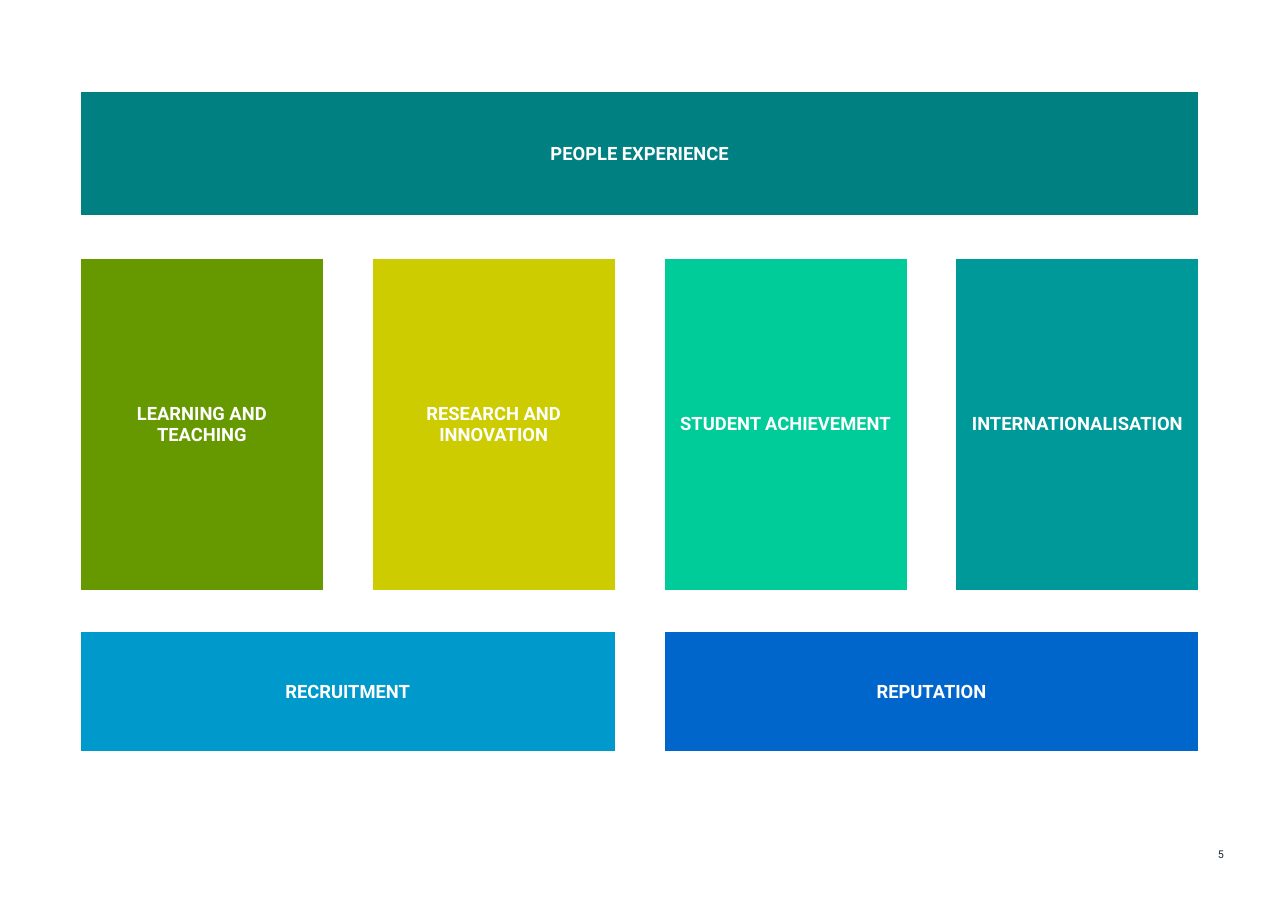
from lxml.etree import SubElement
from pptx import Presentation
from pptx.dml.color import RGBColor
from pptx.enum.text import MSO_ANCHOR as Anchor, PP_ALIGN as Align
from pptx.oxml.ns import qn
from pptx.util import Cm, Pt

FONT = "Roboto"
WHITE = RGBColor(0xFF, 0xFF, 0xFF)
INK = RGBColor(0x17, 0x29, 0x34)
TEAL = RGBColor(0x00, 0x80, 0x80)
GREEN = RGBColor(0x66, 0x99, 0x00)
YELLOW = RGBColor(0xCC, 0xCC, 0x00)
MINT = RGBColor(0x00, 0xCC, 0x99)
TURQUOISE = RGBColor(0x00, 0x99, 0x99)
SKY = RGBColor(0x00, 0x99, 0xCC)
BLUE = RGBColor(0x00, 0x66, 0xCC)

PILLAR_WIDTH, GAP_WIDTH = 5.61, 1.12
COLUMN_WIDTHS = [PILLAR_WIDTH, GAP_WIDTH] * 3 + [PILLAR_WIDTH]
ROW_HEIGHTS = [2.9, 0.94, 7.67, 0.94, 2.77]
THEMES = [
    (0, 0, 7, "PEOPLE EXPERIENCE", TEAL),
    (2, 0, 1, "LEARNING AND TEACHING", GREEN),
    (2, 2, 1, "RESEARCH AND INNOVATION", YELLOW),
    (2, 4, 1, "STUDENT ACHIEVEMENT", MINT),
    (2, 6, 1, "INTERNATIONALISATION", TURQUOISE),
    (4, 0, 3, "RECRUITMENT", SKY),
    (4, 4, 3, "REPUTATION", BLUE),
]


def write_text(frame, text, size, color, align, bold=False, spacing=0):
    """Write one formatted paragraph into a text frame."""
    paragraph = frame.paragraphs[0]
    paragraph.alignment = align
    run = paragraph.add_run()
    run.text = text
    run.font.name = FONT
    run.font.size = Pt(size)
    run.font.bold = bold
    run.font.color.rgb = color
    if spacing:
        run._r.get_or_add_rPr().set("spc", str(int(spacing * 100)))


def set_borders(cell, bottom_width):
    """Give a cell white borders."""
    properties = cell._tc.get_or_add_tcPr()
    widths = {"a:lnL": 1, "a:lnR": 1, "a:lnT": 1, "a:lnB": bottom_width}
    for tag, width in widths.items():
        line = SubElement(properties, qn(tag), w=str(Pt(width)))
        fill = SubElement(line, qn("a:solidFill"))
        SubElement(fill, qn("a:srgbClr"), val=str(WHITE))


def fill_cell(cell, color):
    """Fill a cell with a plain colour."""
    cell.fill.solid()
    cell.fill.fore_color.rgb = color


def add_theme_table(slide, left, top):
    """Place the table of strategic themes with its top left corner as given."""
    frame = slide.shapes.add_table(
        len(ROW_HEIGHTS), len(COLUMN_WIDTHS), Cm(left), Cm(top),
        Cm(sum(COLUMN_WIDTHS)), Cm(sum(ROW_HEIGHTS)))
    table = frame.table
    table.first_row = table.horz_banding = False
    for column, width in zip(table.columns, COLUMN_WIDTHS):
        column.width = Cm(width)
    for index, (row, height) in enumerate(zip(table.rows, ROW_HEIGHTS)):
        row.height = Cm(height)
        for cell in row.cells:
            cell.margin_top = cell.margin_bottom = 0
            set_borders(cell, bottom_width=3 if index == 0 else 1)
            fill_cell(cell, WHITE)
    for row, column, span, text, color in THEMES:
        cell = table.cell(row, column)
        if span > 1:
            cell.merge(table.cell(row, column + span - 1))
        fill_cell(cell, color)
        cell.vertical_anchor = Anchor.MIDDLE
        write_text(cell.text_frame, text, 12, WHITE, Align.CENTER, bold=True)


def add_page_number(slide, left, top, width, height):
    """Place the page number in the given box."""
    box = slide.shapes.add_textbox(Cm(left), Cm(top), Cm(width), Cm(height))
    frame = box.text_frame
    frame.word_wrap = True
    frame.vertical_anchor = Anchor.MIDDLE
    frame.margin_left = frame.margin_right = 0
    frame.margin_top = frame.margin_bottom = 0
    write_text(frame, "5", 7, INK, Align.RIGHT, spacing=1.5)


def main():
    """Build the slide and save it."""
    presentation = Presentation()
    presentation.slide_width = Cm(29.7)
    presentation.slide_height = Cm(21)
    slide = presentation.slides.add_slide(presentation.slide_layouts[6])
    add_page_number(slide, 25.98, 19.41, 2.24, 0.56)
    add_theme_table(slide, 1.85, 2.11)
    presentation.save("out.pptx")


if __name__ == "__main__":
    main()
